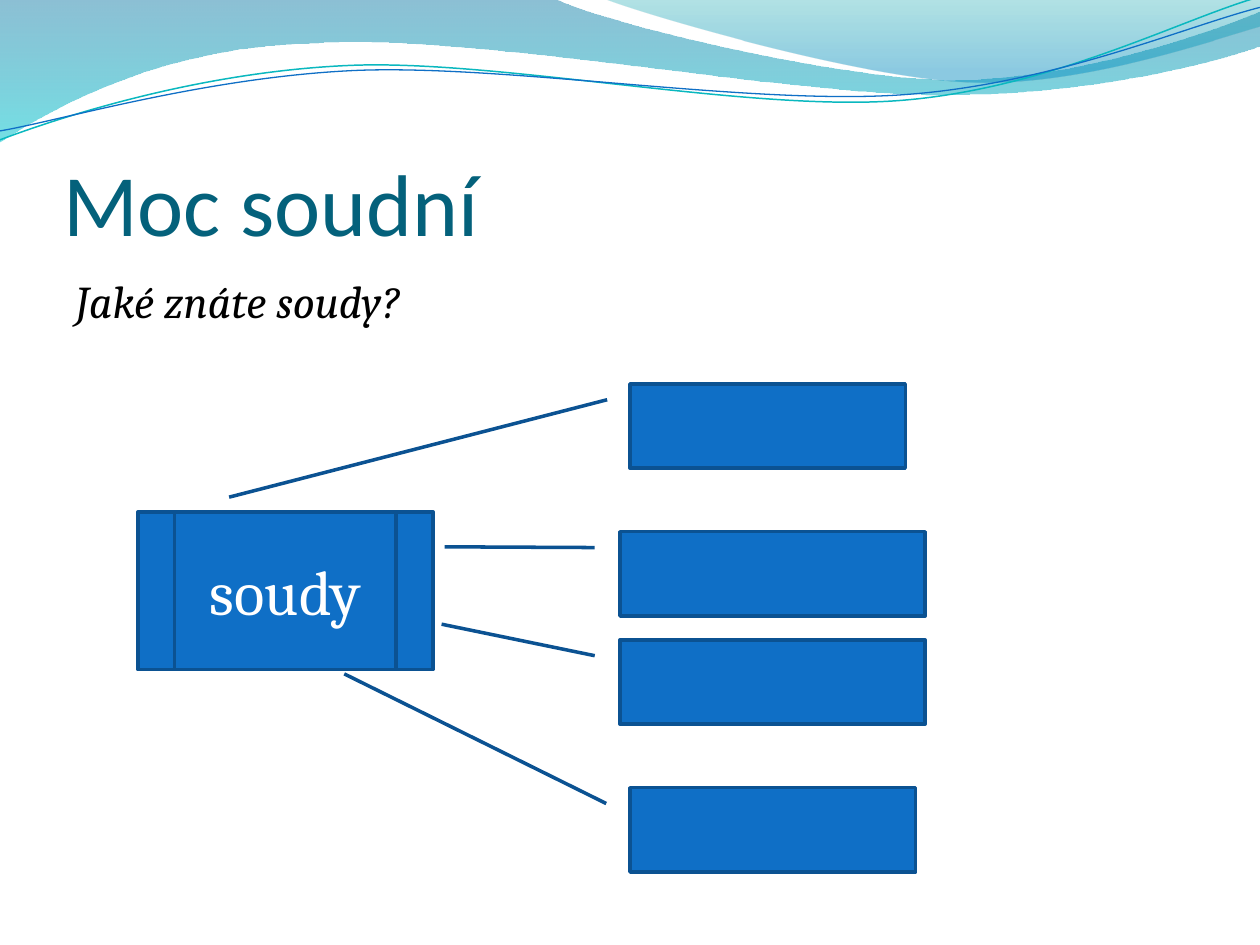
from lxml.etree import SubElement
from pptx import Presentation
from pptx.dml.color import RGBColor
from pptx.enum.shapes import MSO_SHAPE
from pptx.enum.text import MSO_ANCHOR, MSO_AUTO_SIZE, PP_ALIGN
from pptx.oxml.ns import qn
from pptx.util import Cm, Pt

BLUE = RGBColor(0x0F, 0x6F, 0xC6)
NAVY = RGBColor(0x0B, 0x52, 0x92)
TEAL = RGBColor(0x0A, 0xB8, 0xBF)
INK = RGBColor(0x04, 0x61, 0x7B)
BLACK = RGBColor(0, 0, 0)
WHITE = RGBColor(255, 255, 255)
SEA = RGBColor(0x00, 0x74, 0xA1)
AQUA = RGBColor(0x00, 0xC6, 0xCF)
MINT = RGBColor(0x00, 0xA1, 0xA9)
SKY = RGBColor(0x00, 0x8B, 0xBF)

BAND = [(0, 0), (11.18, -0.03),
        (12.09, 0.43, 16.87, 1.6, 19.25, 1.6),
        (21.67, 1.6, 24.33, 0.66, 25.4, 0.23), (25.43, 0.91),
        (24.97, 1.12, 22.1, 1.93, 18.95, 1.91),
        (15.8, 1.91, 9.7, 0.71, 6.53, 0.86),
        (3.28, 0.91, 1.17, 2.11, -0.03, 2.87)]
CREST = [(12.17, -0.03),
         (12.93, 0.28, 17.32, 1.57, 19.53, 1.65),
         (21.74, 1.75, 24.41, 0.81, 25.4, 0.53), (25.4, 0)]
UPPER = [(0, 2.82),
         (1.22, 2.36, 4.01, 1.45, 7.04, 1.32),
         (10.03, 1.19, 15.06, 2.26, 18.11, 2.03),
         (21.16, 1.8, 23.83, 0.38, 25.35, -0.05)]
LOWER = [(0, 2.64),
         (1.19, 2.44, 4.17, 1.55, 7.19, 1.42),
         (10.24, 1.3, 15.16, 2.13, 18.21, 1.91),
         (21.23, 1.7, 23.9, 0.53, 25.4, 0.15)]
COURTS = [(12.7, 7.74, 5.55, (0.188, -0.083, 1.343, -1.456)),
          (12.7, 15.88, 5.76, (0.188, -0.083, -1.35, -1)),
          (12.5, 10.72, 6.15, (0.188, -0.083, 0.179, -0.575)),
          (12.5, 12.9, 6.15, (0.188, -0.083, -0.186, -0.585))]


def draw(slide, path, close):
    """Build a freeform whose six-number segments are Bezier curves."""
    dots = [(Cm(seg[i]), Cm(seg[i + 1]))
            for seg in path for i in range(0, len(seg), 2)]
    pen = slide.shapes.build_freeform(*dots[0], scale=1.0)
    pen.add_line_segments(dots[1:], close=close)
    form = pen.convert_to_shape()
    form.shadow.inherit = False
    lines = iter(list(form._element.spPr.iter(qn("a:lnTo"))))
    for seg in path[1:]:
        line = next(lines)
        if len(seg) == 6:
            line.tag = qn("a:cubicBezTo")
            for more in (next(lines), next(lines)):
                line.append(more[0])
                more.getparent().remove(more)
    return form


def wave(slide, path, stops):
    """Add an area with a see-through vertical gradient."""
    form = draw(slide, path, True)
    form.line.fill.background()
    form.fill.gradient()
    form.fill.gradient_angle = 270
    for stop, (place, color, alpha) in zip(form.fill.gradient_stops, stops):
        stop.position = place
        stop.color.rgb = color
    tones = form._element.spPr.iter(qn("a:srgbClr"))
    for tone, (place, color, alpha) in zip(tones, stops):
        SubElement(tone, qn("a:alpha")).set("val", str(alpha * 1000))


def curve(slide, path, color, width):
    """Add an open curved line."""
    form = draw(slide, path, False)
    form.fill.background()
    form.line.color.rgb = color
    form.line.width = Pt(width)


def write(shape, text, size, font, color, italic=False,
          align=PP_ALIGN.LEFT, anchor=MSO_ANCHOR.TOP, before=0):
    """Put formatted text into a shape."""
    frame = shape.text_frame
    frame.word_wrap = True
    frame.auto_size = MSO_AUTO_SIZE.NONE
    frame.vertical_anchor = anchor
    para = frame.paragraphs[0]
    para.alignment = align
    para.space_before = Pt(before)
    run = para.add_run()
    run.text = text
    run.font.size = Pt(size)
    run.font.name = font
    run.font.italic = italic
    run.font.color.rgb = color


def box(slide, kind, left, top, width, height):
    """Add a blue box with a dark outline."""
    shape = slide.shapes.add_shape(kind, Cm(left), Cm(top),
                                   Cm(width), Cm(height))
    shape.shadow.inherit = False
    shape.fill.solid()
    shape.fill.fore_color.rgb = BLUE
    shape.line.color.rgb = NAVY
    shape.line.width = Pt(2)
    return shape


def head(slide, text):
    """Place and format the title in front of the waves."""
    title = slide.shapes.title
    slide.shapes._spTree.append(title._element)
    title.left, title.top = Cm(1.27), Cm(1.95)
    title.width, title.height = Cm(22.86), Cm(3.17)
    frame = title.text_frame
    frame.margin_left = frame.margin_right = frame.margin_bottom = 0
    frame.margin_top = Cm(0.13)
    write(title, text, 50, "Calibri", INK, anchor=MSO_ANCHOR.BOTTOM)


def main():
    """Build the slide and save it."""
    deck = Presentation()
    deck.slide_width, deck.slide_height = Cm(25.4), Cm(19.05)
    slide = deck.slides.add_slide(deck.slide_layouts[5])

    wave(slide, BAND, [(0, SEA, 45), (1, AQUA, 55)])
    wave(slide, CREST, [(0, MINT, 30), (0.8, SKY, 45)])
    curve(slide, UPPER, TEAL, 0.85)
    curve(slide, LOWER, BLUE, 0.75)

    head(slide, "Moc soudní")
    body = slide.shapes.add_textbox(Cm(1.27), Cm(5.38), Cm(22.86), Cm(12.19))
    write(body, "Jaké znáte soudy?", 26, "Cambria", BLACK,
          italic=True, before=5.2)

    root = box(slide, MSO_SHAPE.FLOWCHART_PREDEFINED_PROCESS,
               2.78, 10.32, 5.95, 3.18)
    write(root, "soudy", 36, "Cambria", WHITE,
          align=PP_ALIGN.CENTER, anchor=MSO_ANCHOR.MIDDLE)
    for left, top, width, tail in COURTS:
        court = box(slide, MSO_SHAPE.LINE_CALLOUT_1, left, top, width, 1.7)
        for i, value in enumerate(tail):
            court.adjustments[i] = value

    deck.save("out.pptx")


if __name__ == "__main__":
    main()
